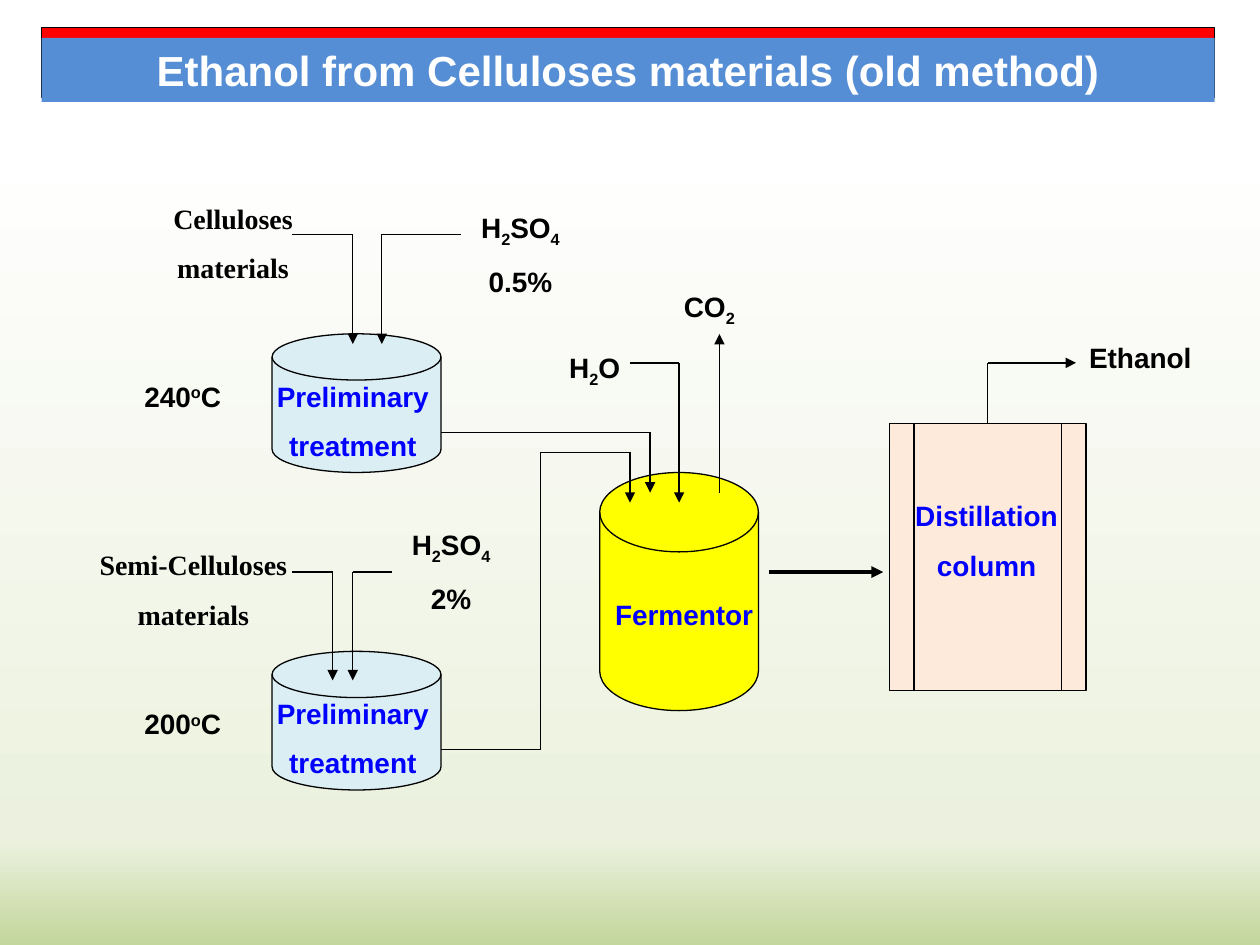
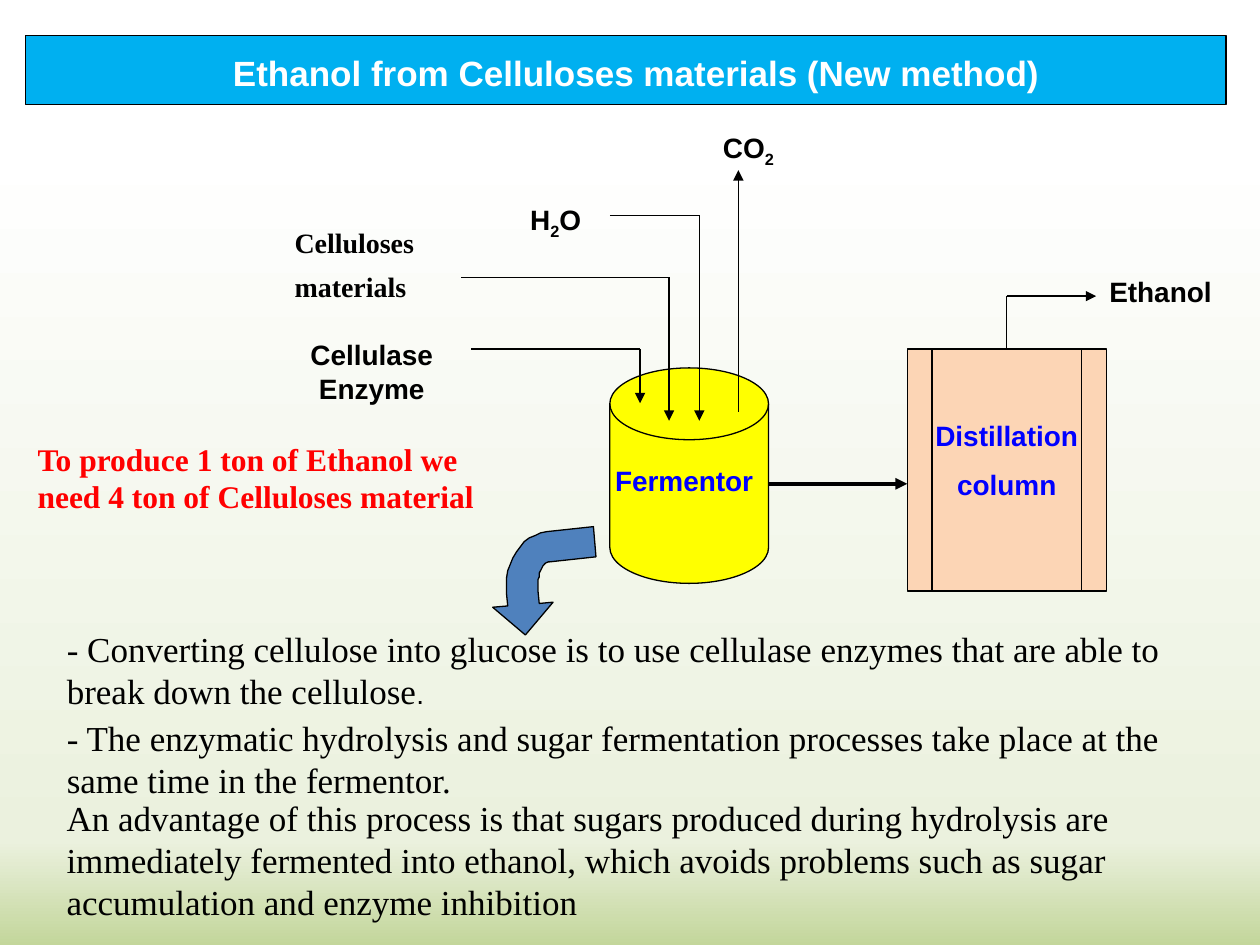
from pptx import Presentation
from pptx import util as u
from pptx.dml.color import RGBColor
from pptx.enum import shapes, text
from pptx.oxml import parse_xml
from pptx.oxml.ns import nsdecls, qn

PX = 9144  # 100 px to the inch
SANS, SERIF = "Arial", "Times New Roman"
BLACK, WHITE, BLUE, RED, YELLOW, SKY = "000000", "FFFFFF", "0000FF", "FF0000", "FFFF00", "00B0F0"
TANK = shapes.MSO_SHAPE.FLOWCHART_MAGNETIC_DISK
COLUMN = shapes.MSO_SHAPE.FLOWCHART_PREDEFINED_PROCESS
RECT = shapes.MSO_SHAPE.RECTANGLE
LEFT, CENTER = text.PP_ALIGN.LEFT, text.PP_ALIGN.CENTER
BACKGROUND = [(15, "FFFFFF"), (89, "EBF1DE"), (100, "C3D69B")]
SHIFTS = {"_": -25000, "^": 30000}  # mark before a lowered or raised character

# Boxes are (left, top, width, height); routes list the corners of a pipe.
OLD = {
    "layout": 5,
    "title": "Ethanol from Celluloses materials (old method)",
    "title_box": (33, 30, 931, 51), "title_size": 24, "title_fill": "558ED5",
    "band_box": (33, 22, 931, 55), "band_fill": RED,
    "tanks": [((216, 265, 134, 110), "DBEEF4"), ((216, 517, 134, 110), "DBEEF4"),
              ((476, 375, 126, 189), YELLOW)],
    "column": ((706, 336, 156, 212), "FDEADA"),
    "labels": [
        ((358, 162, 110, 77), ["H_2SO_4", "0.5%"], {}),
        ((122, 155, 126, 77), ["Celluloses", "materials"], {"font": SERIF}),
        ((67, 430, 173, 77), ["Semi-Celluloses", "materials"], {"font": SERIF}),
        ((303, 414, 110, 77), ["H_2SO_4", "2%"], {}),
        ((209, 296, 142, 77), ["Preliminary", "treatment"], {"color": BLUE}),
        ((209, 548, 142, 77), ["Preliminary", "treatment"], {"color": BLUE}),
        ((468, 469, 150, 37), ["Fermentor"], {"color": BLUE}),
        ((516, 225, 94, 37), ["CO_2"], {}),
        ((429, 273, 86, 37), ["H_2O"], {}),
        ((712, 391, 142, 77), ["Distillation", "column"], {"color": BLUE}),
        ((846, 265, 118, 37), ["Ethanol"], {}),
        ((98, 296, 94, 37), ["240^oC"], {}),
        ((98, 556, 94, 37), ["200^oC"], {}),
    ],
    "product_route": [(784, 336), (784, 288), (854, 288)],
    "main_route": [(610, 454), (701, 454)],
    "routes": [
        [(366, 186), (303, 186), (303, 273)],
        [(232, 186), (280, 186), (280, 273)],
        [(232, 454), (264, 454), (264, 540)],
        [(311, 454), (280, 454), (280, 540)],
        [(350, 343), (516, 343), (516, 391)],
        [(350, 595), (429, 595), (429, 359), (500, 359), (500, 399)],
        [(500, 288), (539, 288), (539, 399)],
        [(571, 391), (571, 265)],
    ],
}
NEW = {
    "layout": 1,
    "title": "Ethanol from Celluloses materials (New method)",
    "title_box": (38, 36, 934, 43), "title_size": 20, "title_fill": SKY,
    "band_box": (20, 28, 953, 55), "band_fill": SKY,
    "tanks": [((484, 292, 126, 171), YELLOW)],
    "column": ((720, 277, 158, 192), "FCD5B5"),
    "labels": [
        ((224, 178, 126, 69), ["Celluloses", "materials"],
         {"font": SERIF, "align": LEFT, "spacing": 0.85}),
        ((468, 363, 150, 37), ["Fermentor"], {"color": BLUE}),
        ((547, 99, 94, 37), ["CO_2"], {}),
        ((398, 156, 86, 37), ["H_2O"], {}),
        ((728, 327, 142, 77), ["Distillation", "column"], {"color": BLUE}),
        ((862, 213, 118, 37), ["Ethanol"], {}),
        ((224, 263, 142, 64), ["Cellulase Enzyme"], {}),
        ((20, 344, 386, 70), ["To produce 1 ton of Ethanol we need 4 ton of Celluloses material"],
         {"font": SERIF, "size": 18, "color": RED, "align": LEFT}),
        ((43, 627, 957, 111),
         ["An advantage of this process is that sugars produced during hydrolysis are "
          "immediately fermented into ethanol, which avoids problems such as sugar "
          "accumulation and enzyme inhibition"],
         {"font": SERIF, "size": 20, "bold": False, "align": LEFT}),
    ],
    "product_route": [(799, 277), (799, 235), (870, 235)],
    "main_route": [(610, 384), (720, 384)],
    "routes": [
        [(366, 220), (531, 220), (531, 334)],
        [(374, 277), (508, 277), (508, 320)],
        [(484, 171), (555, 171), (555, 334)],
        [(586, 327), (586, 135)],
    ],
}
NOTES_BOX = (43, 493, 929, 148)
NOTES = [
    "- Converting cellulose into glucose is to use cellulase enzymes that are able to "
    "break down the cellulose",
    "- The enzymatic hydrolysis and sugar fermentation processes take place at the "
    "same time in the fermentor.",
]
# Two numbers make a corner, six make a curve with two control points.
BENT_ARROW = [(417, 504), (391, 482), (403, 481), (402, 471), (400, 446, 414, 424, 434, 422),
              (471, 418), (473, 442), (436, 446), (430, 446, 426, 457, 427, 469),
              (428, 479), (439, 478)]


def rgb(value):
    return RGBColor.from_string(value)


def emu(lengths):
    return [round(length * PX) for length in lengths]


def place(shape, box):
    shape.left, shape.top, shape.width, shape.height = emu(box)


def paint(shape, fill, line=BLACK):
    shape.shadow.inherit = False
    shape.fill.solid()
    shape.fill.fore_color.rgb = rgb(fill)
    shape.line.color.rgb = rgb(line)
    shape.line.width = u.Pt(0.75)
    return shape


def add_part(page, kind, box, fill):
    return paint(page.shapes.add_shape(kind, *emu(box)), fill)


def pieces(line):
    """Split a line into (text, baseline shift) pairs at the marks in SHIFTS."""
    plain, chars = "", iter(line)
    for char in chars:
        if char in SHIFTS:
            if plain:
                yield plain, 0
            yield next(chars), SHIFTS[char]
            plain = ""
        else:
            plain += char
    if plain:
        yield plain, 0


def add_span(para, words, size=16, font=SANS, color=BLACK, bold=True, shift=0):
    span = para.add_run()
    span.text = words
    span.font.size, span.font.name, span.font.bold = u.Pt(size), font, bold
    span.font.color.rgb = rgb(color)
    if shift:
        span.font._element.set("baseline", str(shift))


def write(shape, lines, align=CENTER, gap=9, spacing=1.0, anchor=text.MSO_ANCHOR.TOP, **style):
    frame = shape.text_frame
    frame.word_wrap = True
    frame.auto_size = text.MSO_AUTO_SIZE.NONE
    frame.vertical_anchor = anchor
    for number, line in enumerate(lines):
        para = frame.add_paragraph() if number else frame.paragraphs[0]
        para.alignment, para.line_spacing = align, spacing
        para.space_before = u.Pt(gap if number else 0)
        for words, shift in pieces(line):
            add_span(para, words, shift=shift, **style)
    return frame


def add_route(page, corners, width=0.75, source=None):
    """Draw a pipe through its corners, with an arrowhead on the last stretch."""
    for start, end in zip(corners, corners[1:]):
        pipe = page.shapes.add_connector(shapes.MSO_CONNECTOR.STRAIGHT, *emu(start + end))
        if source is not None and start == corners[0]:
            pipe.begin_connect(source, 0)
        pipe.line.color.rgb = rgb(BLACK)
        pipe.line.width = u.Pt(width)
        properties = pipe.element.spPr
        properties.append(parse_xml(f'<a:effectLst {nsdecls("a")}/>'))
    pipe.line._get_or_add_ln().append(parse_xml(f'<a:tailEnd {nsdecls("a")} type="triangle"/>'))


def add_bent_arrow(page, steps=12):
    points = [BENT_ARROW[0]]
    for part in BENT_ARROW[1:]:
        if len(part) == 2:
            points.append(part)
            continue
        a, b, c, d = points[-1], part[:2], part[2:4], part[4:]
        for step in range(1, steps + 1):
            t = step / steps
            weights = ((1 - t) ** 3, 3 * t * (1 - t) ** 2, 3 * t * t * (1 - t), t ** 3)
            points.append(tuple(sum(w * p[axis] for w, p in zip(weights, (a, b, c, d)))
                                for axis in (0, 1)))
    builder = page.shapes.build_freeform(*points[0], scale=PX)
    builder.add_line_segments(points[1:], close=True)
    paint(builder.convert_to_shape(), "4F81BD")


def set_background(master):
    fill = master.background.fill
    fill.gradient()
    fill.gradient_angle = 270
    stops = master.element.find(".//" + qn("a:gsLst"))
    for stop in list(stops):
        stops.remove(stop)
    for percent, color in BACKGROUND:
        stops.append(parse_xml(f'<a:gs {nsdecls("a")} pos="{percent * 1000}">'
                               f'<a:srgbClr val="{color}"/></a:gs>'))


def add_page(deck, plan):
    page = deck.slides.add_slide(deck.slide_layouts[plan["layout"]])
    title = page.shapes.title
    place(title, plan["title_box"])
    title.fill.solid()
    title.fill.fore_color.rgb = rgb(plan["title_fill"])
    write(title, [plan["title"]], size=plan["title_size"], color=WHITE,
          anchor=text.MSO_ANCHOR.MIDDLE)
    band = add_part(page, RECT, plan["band_box"], plan["band_fill"])
    title.element.addprevious(band.element)

    for box, fill in plan["tanks"]:
        add_part(page, TANK, box, fill)
    column = add_part(page, COLUMN, *plan["column"])
    for box, lines, style in plan["labels"]:
        write(page.shapes.add_textbox(*emu(box)), lines, **style)
    for corners in plan["routes"]:
        add_route(page, corners)
    add_route(page, plan["product_route"], source=column)
    add_route(page, plan["main_route"], width=2.25)
    return page


def add_notes(page):
    body = page.placeholders[1]
    place(body, NOTES_BOX)
    frame = write(body, NOTES, align=LEFT, gap=3, size=20, font=SERIF, bold=False)
    for para in frame.paragraphs:
        properties = para._p.get_or_add_pPr()
        properties.set("marL", "0")
        properties.set("indent", "0")
        properties.append(parse_xml(f'<a:buNone {nsdecls("a")}/>'))
    add_span(frame.paragraphs[0], ".", bold=False)


def main():
    deck = Presentation()
    deck.slide_width, deck.slide_height = emu((1000, 750))
    set_background(deck.slide_master)
    add_page(deck, OLD)
    page = add_page(deck, NEW)
    add_bent_arrow(page)
    add_notes(page)
    deck.save("out.pptx")


if __name__ == "__main__":
    main()
